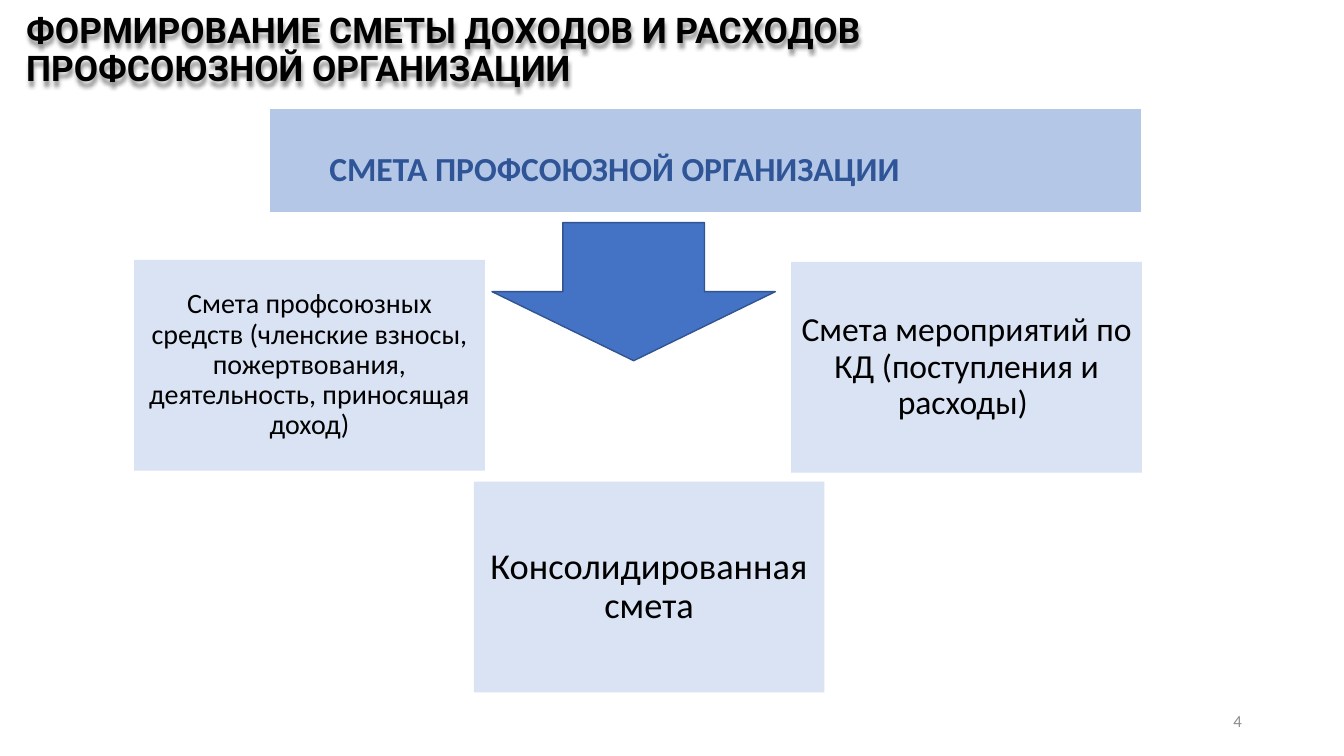
from lxml.etree import SubElement
from pptx import Presentation
from pptx.dml.color import RGBColor
from pptx.enum.shapes import MSO_SHAPE as Preset
from pptx.enum.text import MSO_ANCHOR as Anchor, MSO_AUTO_SIZE as AutoSize, PP_ALIGN as Align
from pptx.oxml.ns import qn
from pptx.util import Cm, Pt

COLORS = {
    "black": "000000",
    "card": "DAE3F3",
    "banner": "B4C7E7",
    "heading": "2F5597",
    "arrow": "4472C4",
    "outline": "325491",
    "white": "FFFFFF",
    "number": "8C8C8C",
}
CARD_WIDTH, CARD_HEIGHT = 8.84, 5.31
CARDS = [
    (3.38, 6.55, 20, 0.2, "Смета профсоюзных средств (членские взносы, пожертвования, "
                          "деятельность, приносящая доход)"),
    (19.94, 6.6, 24, 0.25, "Смета мероприятий по КД (поступления и расходы) "),
    (11.94, 12.14, 26, 0.28, "Консолидированная смета"),
]


class SlideBuilder:
    def __init__(self, deck, font="Calibri"):
        self.page = deck.slides.add_slide(deck.slide_layouts[5])
        self.font = font

    def color(self, name):
        return RGBColor.from_string(COLORS[name])

    def label(self, shape, text, size, color="black", align=Align.CENTER, bold=False,
              font=None, spacing=None, anchor=Anchor.MIDDLE, insets=(0.25, 0.13, 0.25, 0.13)):
        frame = shape.text_frame
        frame.word_wrap = True
        frame.auto_size = AutoSize.NONE
        frame.vertical_anchor = anchor
        (frame.margin_left, frame.margin_top,
         frame.margin_right, frame.margin_bottom) = map(Cm, insets)
        para = frame.paragraphs[0]
        para.text = text
        para.alignment = align
        para.line_spacing = spacing
        para.font.name = font or self.font
        para.font.size = Pt(size)
        para.font.bold = bold
        para.font.color.rgb = self.color(color)

    def title(self, text):
        box = self.page.shapes.title
        box.left, box.top, box.width, box.height = map(Cm, (0.41, 0.61, 24.59, 1.37))
        self.label(box, text, 25.2, align=Align.LEFT, bold=True, font="Roboto", spacing=0.9)
        effects = SubElement(box.element.spPr, qn("a:effectLst"))
        shadow = SubElement(effects, qn("a:outerShdw"), blurRad="38100", dist="38100",
                            dir="5400000", algn="t", rotWithShape="0")
        tint = SubElement(shadow, qn("a:srgbClr"), val=COLORS["black"])
        SubElement(tint, qn("a:alpha"), val="40000")

    def block(self, preset, left, top, width, height, fill, line=None, weight=1):
        shape = self.page.shapes.add_shape(preset, *map(Cm, (left, top, width, height)))
        shape.shadow.inherit = False
        shape.fill.solid()
        shape.fill.fore_color.rgb = self.color(fill)
        if line:
            shape.line.color.rgb = self.color(line)
            shape.line.width = Pt(weight)
        else:
            shape.line.fill.background()
        return shape

    def card(self, left, top, size, inset, text):
        box = self.block(Preset.RECTANGLE, left, top, CARD_WIDTH, CARD_HEIGHT, "card")
        self.label(box, text, size, spacing=0.9, insets=(inset,) * 4)

    def banner(self, text):
        box = self.block(Preset.RECTANGLE, 6.78, 2.74, 22, 2.62, "banner", "white", 0.75)
        self.label(box, text, 24, "heading", Align.LEFT, bold=True,
                   anchor=Anchor.TOP, insets=(1.52, 1, 0.25, 0.13))

    def arrow(self):
        self.block(Preset.DOWN_ARROW, 12.4, 5.61, 7.14, 3.48, "arrow", "outline")

    def number(self, text):
        box = self.page.shapes.add_textbox(*map(Cm, (23.93, 17.65, 7.62, 1.02)))
        self.label(box, text, 12, "number", Align.RIGHT)


def main():
    deck = Presentation()
    deck.slide_width, deck.slide_height = Cm(33.87), Cm(19.05)
    slide = SlideBuilder(deck)
    for card in CARDS:
        slide.card(*card)
    slide.title("ФОРМИРОВАНИЕ СМЕТЫ ДОХОДОВ И РАСХОДОВ ПРОФСОЮЗНОЙ ОРГАНИЗАЦИИ")
    slide.banner("СМЕТА ПРОФСОЮЗНОЙ ОРГАНИЗАЦИИ")
    slide.arrow()
    slide.number("4")
    deck.save("out.pptx")


if __name__ == "__main__":
    main()
